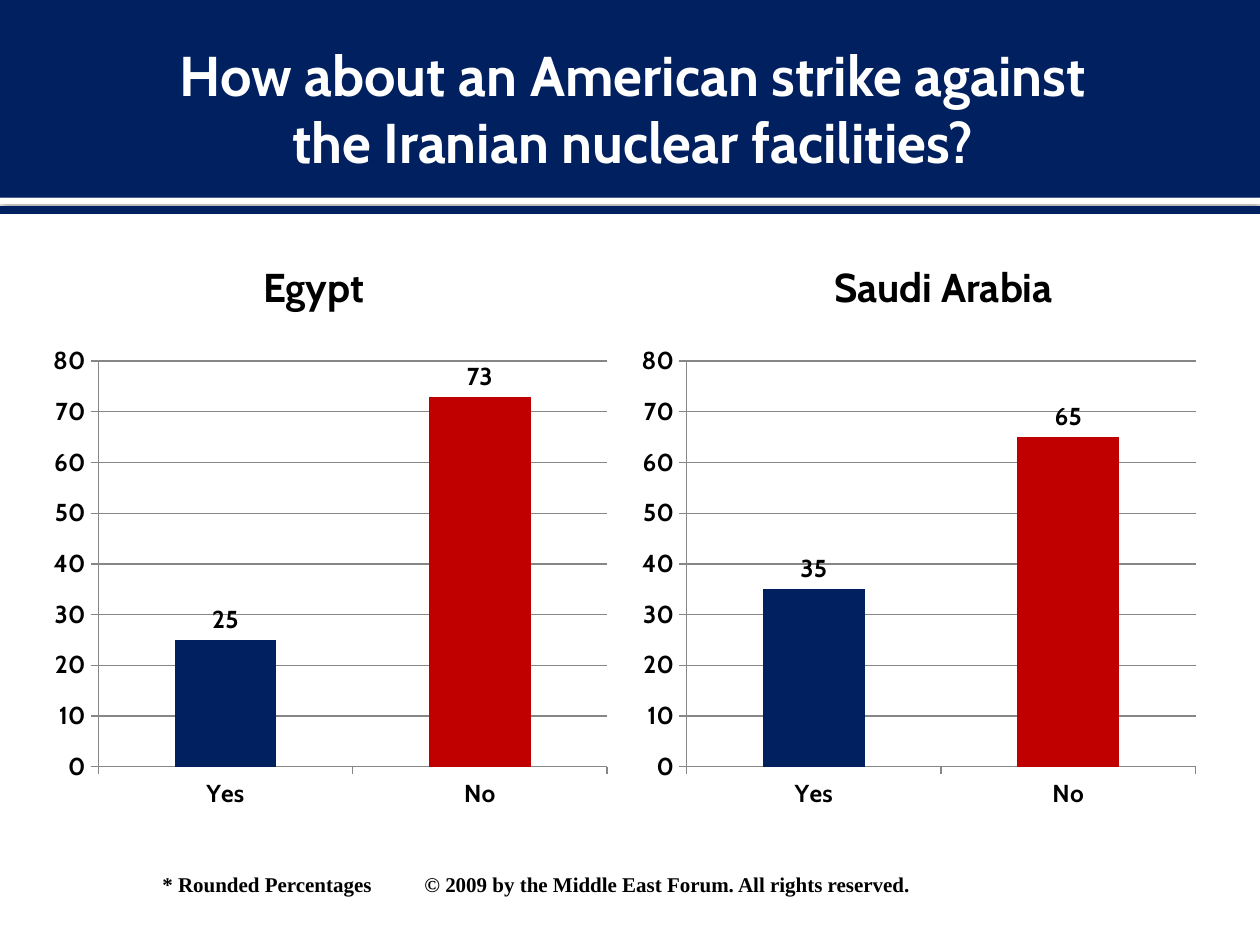
from lxml import etree
from pptx import Presentation
from pptx.chart.data import CategoryChartData
from pptx.dml.color import RGBColor
from pptx.enum.chart import XL_CHART_TYPE, XL_LABEL_POSITION, XL_TICK_MARK
from pptx.enum.shapes import MSO_CONNECTOR, MSO_SHAPE
from pptx.enum.text import MSO_ANCHOR, PP_ALIGN
from pptx.oxml import parse_xml
from pptx.oxml.ns import nsdecls, qn
from pptx.util import Inches, Pt

NAVY = RGBColor(0x00, 0x20, 0x60)
RED = RGBColor(0xC0, 0x00, 0x00)
WHITE = RGBColor(0xFF, 0xFF, 0xFF)
BLACK = RGBColor(0x00, 0x00, 0x00)
GRAY = RGBColor(0x86, 0x86, 0x86)
HEADING_FONT = "Cabin"

TITLE = "How about an American strike against\vthe Iranian nuclear facilities?"
CATEGORIES = ("Yes", "No")
POLLS = (
    {"country": "Egypt", "values": (25, 73), "heading_left": 0.25,
     "chart_left": 0.33, "placeholder": 1},
    {"country": "Saudi Arabia", "values": (35, 65), "heading_left": 5.25,
     "chart_left": 5, "placeholder": 3},
)
FOOTNOTE = "* Rounded Percentages\t© 2009 by the Middle East Forum. All rights reserved."

WIDTH, HEIGHT = 10, 7.5
BAND_HEIGHT = 1.57
STRIPE_HEIGHT = 0.05
RULE_TOP = 1.67


def set_font(font, size, color, name=HEADING_FONT):
    values = {"name": name, "size": Pt(size), "bold": True}
    for attribute, value in values.items():
        setattr(font, attribute, value)
    font.color.rgb = color


def place(shape, left, top, width, height):
    box = {"left": left, "top": top, "width": width, "height": height}
    for attribute, value in box.items():
        setattr(shape, attribute, Inches(value))


def fill_placeholder(shape, text, box, margins, size, color):
    place(shape, *box)
    frame = shape.text_frame
    frame.text = text
    frame.word_wrap = True
    frame.vertical_anchor = MSO_ANCHOR.MIDDLE
    for side, margin in zip(("left", "top", "right", "bottom"), margins):
        setattr(frame, f"margin_{side}", Inches(margin))
    paragraph = frame.paragraphs[0]
    paragraph.alignment = PP_ALIGN.CENTER
    paragraph.space_before = Pt(0)
    set_font(paragraph.font, size, color)
    for run in paragraph.runs:
        set_font(run.font, size, color)


def add_bar(slide, top, height, color):
    bar = slide.shapes.add_shape(
        MSO_SHAPE.RECTANGLE, 0, Inches(top), Inches(WIDTH), Inches(height))
    bar.shadow.inherit = False
    bar.fill.solid()
    bar.fill.fore_color.rgb = color
    bar.line.fill.background()
    return bar


def add_header(slide):
    """Draw the title band, its shadowed stripe and the rule behind all else."""
    stripe = add_bar(slide, BAND_HEIGHT, STRIPE_HEIGHT, WHITE)
    effects = stripe._element.spPr.find(qn("a:effectLst"))
    effects.append(parse_xml(
        f'<a:outerShdw {nsdecls("a")} blurRad="{Pt(5)}" dist="{Pt(0.8)}" '
        'dir="5400000" rotWithShape="0"><a:srgbClr val="000000">'
        '<a:alpha val="60000"/></a:srgbClr></a:outerShdw>'))
    band = add_bar(slide, 0, BAND_HEIGHT, NAVY)
    rule = slide.shapes.add_connector(
        MSO_CONNECTOR.STRAIGHT, 0, Inches(RULE_TOP), Inches(WIDTH), Inches(RULE_TOP))
    rule.line.color.rgb = NAVY
    rule.line.width = Pt(4.5)
    etree.SubElement(rule._element.spPr, qn("a:effectLst"))
    for position, shape in enumerate((stripe, band, rule), start=2):
        slide.shapes._spTree.insert(position, shape._element)


def add_poll_chart(slide, left, values):
    data = CategoryChartData()
    data.categories = CATEGORIES
    data.add_series("Series 1", values)
    chart = slide.shapes.add_chart(
        XL_CHART_TYPE.COLUMN_CLUSTERED,
        Inches(left), Inches(2.67), Inches(4.58), Inches(3.83), data).chart
    chart.has_legend = False
    chart.has_title = False
    set_font(chart.font, 14, BLACK)

    value_axis = chart.value_axis
    value_axis.minimum_scale, value_axis.maximum_scale = 0, 80
    value_axis.major_unit = 10
    value_axis.has_major_gridlines = True
    for axis in (chart.category_axis, value_axis):
        axis.major_tick_mark = XL_TICK_MARK.OUTSIDE
    for part in (chart.category_axis, value_axis, value_axis.major_gridlines):
        part.format.line.color.rgb = GRAY
        part.format.line.width = Pt(0.75)

    plot = chart.plots[0]
    plot.gap_width = 150
    plot.vary_by_categories = False
    series = plot.series[0]
    series.format.fill.solid()
    series.format.fill.fore_color.rgb = NAVY
    no_bar = series.points[1].format.fill
    no_bar.solid()
    no_bar.fore_color.rgb = RED
    labels = series.data_labels
    labels.show_value = True
    labels.position = XL_LABEL_POSITION.OUTSIDE_END
    set_font(labels.font, 14, BLACK)


def add_footnote(slide):
    box = slide.shapes.add_textbox(
        Inches(1.19), Inches(6.87), Inches(6.2), Inches(0.61))
    box.text_frame.word_wrap = False
    paragraph = box.text_frame.paragraphs[0]
    paragraph.text = FOOTNOTE
    tabs = etree.SubElement(paragraph._p.get_or_add_pPr(), qn("a:tabLst"))
    etree.SubElement(tabs, qn("a:tab"), pos=str(Inches(2.08)), algn="l")
    set_font(paragraph.runs[0].font, 12, BLACK, "Times New Roman")


def main():
    presentation = Presentation()
    presentation.slide_width = Inches(WIDTH)
    presentation.slide_height = Inches(HEIGHT)
    comparison_layout = presentation.slide_layouts[4]
    slide = presentation.slides.add_slide(comparison_layout)
    placeholders = {item.placeholder_format.idx: item for item in slide.placeholders}
    for index in (2, 4):
        element = placeholders[index]._element
        element.getparent().remove(element)

    add_header(slide)
    fill_placeholder(slide.shapes.title, TITLE, (0, 0.17, WIDTH, 1.37),
                     (0.1, 0.05, 0.05, 0.05), 32, WHITE)
    for poll in POLLS:
        fill_placeholder(placeholders[poll["placeholder"]], poll["country"],
                         (poll["heading_left"], 1.86, 4.42, 0.78),
                         (0.16, 0.1, 0.1, 0.05), 23, BLACK)
        add_poll_chart(slide, poll["chart_left"], poll["values"])
    add_footnote(slide)
    presentation.save("out.pptx")


if __name__ == "__main__":
    main()
